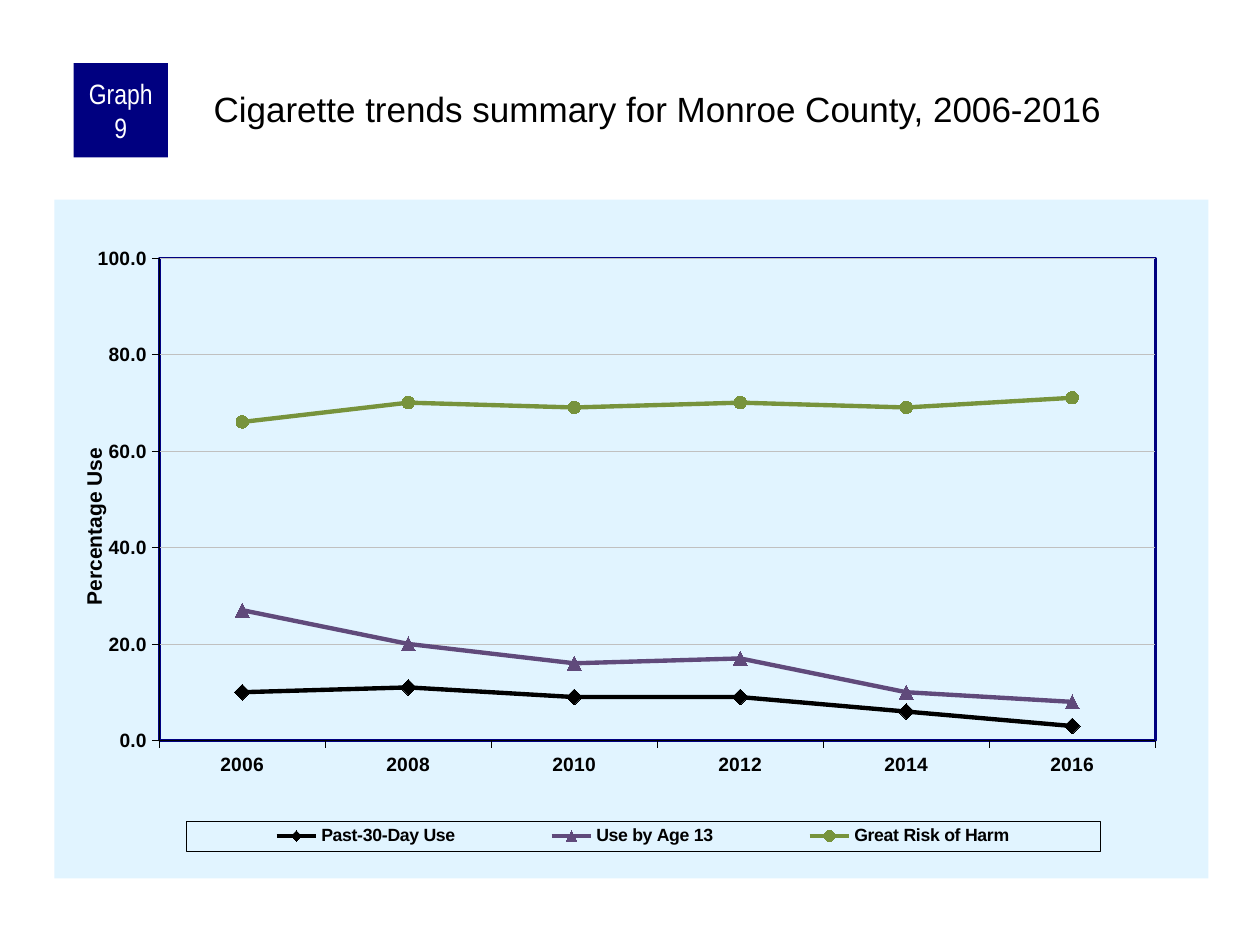
from dataclasses import dataclass

from lxml import etree
from pptx import Presentation
from pptx.chart.data import CategoryChartData
from pptx.dml.color import RGBColor
from pptx.enum.chart import XL_CHART_TYPE, XL_LEGEND_POSITION, XL_MARKER_STYLE, XL_TICK_MARK
from pptx.enum.shapes import MSO_SHAPE
from pptx.enum.text import MSO_ANCHOR, MSO_AUTO_SIZE, PP_ALIGN
from pptx.oxml import parse_xml
from pptx.oxml.ns import nsdecls, qn
from pptx.util import Pt

LINE_MARKERS = XL_CHART_TYPE.LINE_MARKERS
LEGEND_RIGHT = XL_LEGEND_POSITION.RIGHT
DIAMOND, TRIANGLE, CIRCLE = (
    XL_MARKER_STYLE.DIAMOND, XL_MARKER_STYLE.TRIANGLE, XL_MARKER_STYLE.CIRCLE)
OUTSIDE = XL_TICK_MARK.OUTSIDE
TOP, MIDDLE = MSO_ANCHOR.TOP, MSO_ANCHOR.MIDDLE
LEFT, CENTER = PP_ALIGN.LEFT, PP_ALIGN.CENTER

BLACK, WHITE, NAVY = "000000", "FFFFFF", "000080"
PALE_BLUE, GRID_GREY = "E1F4FF", "C0C0C0"
YEARS = ["2006", "2008", "2010", "2012", "2014", "2016"]


@dataclass
class Trend:
    name: str
    values: list[float]
    color: str
    marker: XL_MARKER_STYLE
    size: int


TRENDS = [
    Trend("Past-30-Day Use", [10, 11, 9, 9, 6, 3], BLACK, DIAMOND, 9),
    Trend("Use by Age 13", [27, 20, 16, 17, 10, 8], "604A7B", TRIANGLE, 8),
    Trend("Great Risk of Harm", [66, 70, 69, 70, 69, 71], "77933C", CIRCLE, 7),
]


def rgb(color: str) -> RGBColor:
    return RGBColor.from_string(color)


def set_font(font, size: float, color: str = BLACK, bold: bool = False, name: str = "Arial") -> None:
    font.name, font.size, font.bold = name, Pt(size), bold
    font.color.rgb = rgb(color)


def set_line(line, color: str, width: float) -> None:
    line.color.rgb = rgb(color)
    line.width = Pt(width)


def write(sp, text: str, size: float, color: str, name: str, align, anchor, insets) -> None:
    tf = sp.text_frame
    tf.word_wrap, tf.auto_size, tf.vertical_anchor = True, MSO_AUTO_SIZE.NONE, anchor
    tf.margin_left, tf.margin_top, tf.margin_right, tf.margin_bottom = map(Pt, insets)
    p = tf.paragraphs[0]
    p.alignment = align
    r = p.add_run()
    r.text = text
    set_font(r.font, size, color, name=name)


def layout_xml(x: float, y: float, w: float | None = None, h: float | None = None, inner: bool = False):
    """Manual chart layout, in fractions of the chart area."""
    layout = etree.Element(qn("c:layout"))
    manual = etree.SubElement(layout, qn("c:manualLayout"))
    settings = [("layoutTarget", "inner" if inner else None), ("xMode", "edge"),
                ("yMode", "edge"), ("x", x), ("y", y), ("w", w), ("h", h)]
    for tag, value in settings:
        if value is not None:
            etree.SubElement(manual, qn(f"c:{tag}")).set("val", str(value))
    return layout


def place(parent, layout, index: int) -> None:
    for old in parent.findall(qn("c:layout")):
        parent.remove(old)
    parent.insert(index, layout)


def area_format(fill: str | None = None, line: str | None = None, width: float = 0):
    """Shape properties for a chart part that python-pptx cannot format."""
    def paint(color: str | None) -> str:
        return f'<a:solidFill><a:srgbClr val="{color}"/></a:solidFill>' if color else "<a:noFill/>"
    return parse_xml(f'<c:spPr {nsdecls("c", "a")}>{paint(fill)}'
                     f'<a:ln w="{Pt(width)}">{paint(line)}</a:ln></c:spPr>')


def format_axes(chart) -> None:
    for axis in (chart.category_axis, chart.value_axis):
        axis.major_tick_mark = OUTSIDE
        set_font(axis.tick_labels.font, 11, bold=True)
        set_line(axis.format.line, BLACK, 0.25)
    axis = chart.value_axis
    axis.minimum_scale, axis.maximum_scale, axis.major_unit = 0, 100, 20
    axis.tick_labels.number_format = "0.0"
    axis.tick_labels.number_format_is_linked = False
    set_line(axis.major_gridlines.format.line, GRID_GREY, 0.25)
    title = axis.axis_title
    r = title.text_frame.paragraphs[0].add_run()
    r.text = "Percentage Use"
    set_font(r.font, 12, bold=True)
    body = title._element.find(f".//{qn('a:bodyPr')}")
    body.set("rot", "-5400000")
    body.set("vert", "horz")
    place(title._element, layout_xml(0.02, 0.36), 1)


def format_legend(chart) -> None:
    chart.has_legend = True
    legend = chart.legend
    legend.position = LEGEND_RIGHT
    legend.include_in_layout = False
    set_font(legend.font, 10.1, bold=True)
    place(legend._element, layout_xml(0.114, 0.915, 0.792, 0.045), 1)
    legend._element.find(qn("c:txPr")).addprevious(area_format(line=BLACK, width=0.25))


def add_trend_chart(s) -> None:
    data = CategoryChartData(number_format="0.0")
    data.categories = YEARS
    for trend in TRENDS:
        data.add_series(trend.name, trend.values)
    chart = s.shapes.add_chart(LINE_MARKERS, Pt(31), Pt(114), Pt(659.5), Pt(388), data).chart
    chart.has_title = False
    set_font(chart.font, 8)
    chart.plots[0].vary_by_categories = False
    for series, trend in zip(chart.plots[0].series, TRENDS):
        series.smooth = False
        set_line(series.format.line, trend.color, 2.5)
        marker = series.marker
        marker.style, marker.size = trend.marker, trend.size
        marker.format.fill.solid()
        marker.format.fill.fore_color.rgb = rgb(trend.color)
        set_line(marker.format.line, trend.color, 0.75)
    format_axes(chart)
    format_legend(chart)
    area = chart._chartSpace.chart
    area.addnext(area_format(fill=PALE_BLUE))
    place(area.plotArea, layout_xml(0.091, 0.086, 0.863, 0.711, inner=True), 0)
    area.plotArea.append(area_format(line=NAVY, width=1.5))


def main() -> None:
    prs = Presentation()
    prs.slide_width, prs.slide_height = Pt(720), Pt(540)
    s = prs.slides.add_slide(prs.slide_layouts.get_by_name("Title Only"))

    badge = s.shapes.add_shape(MSO_SHAPE.RECTANGLE, Pt(42), Pt(36), Pt(54), Pt(54))
    badge.shadow.inherit = False
    badge.fill.solid()
    badge.fill.fore_color.rgb = rgb(NAVY)
    badge.line.fill.background()
    write(badge, "Graph 9", 16, WHITE, "Arial Narrow", CENTER, MIDDLE, (3.6, 0, 3.6, 0))

    title = s.shapes.title
    title.left, title.top, title.width, title.height = Pt(120), Pt(48), Pt(570), Pt(60)
    write(title, "Cigarette trends summary for Monroe County, 2006-2016", 20, BLACK,
          "Arial", LEFT, TOP, (2, 2, 0, 0))

    add_trend_chart(s)
    prs.save("out.pptx")


if __name__ == "__main__":
    main()
